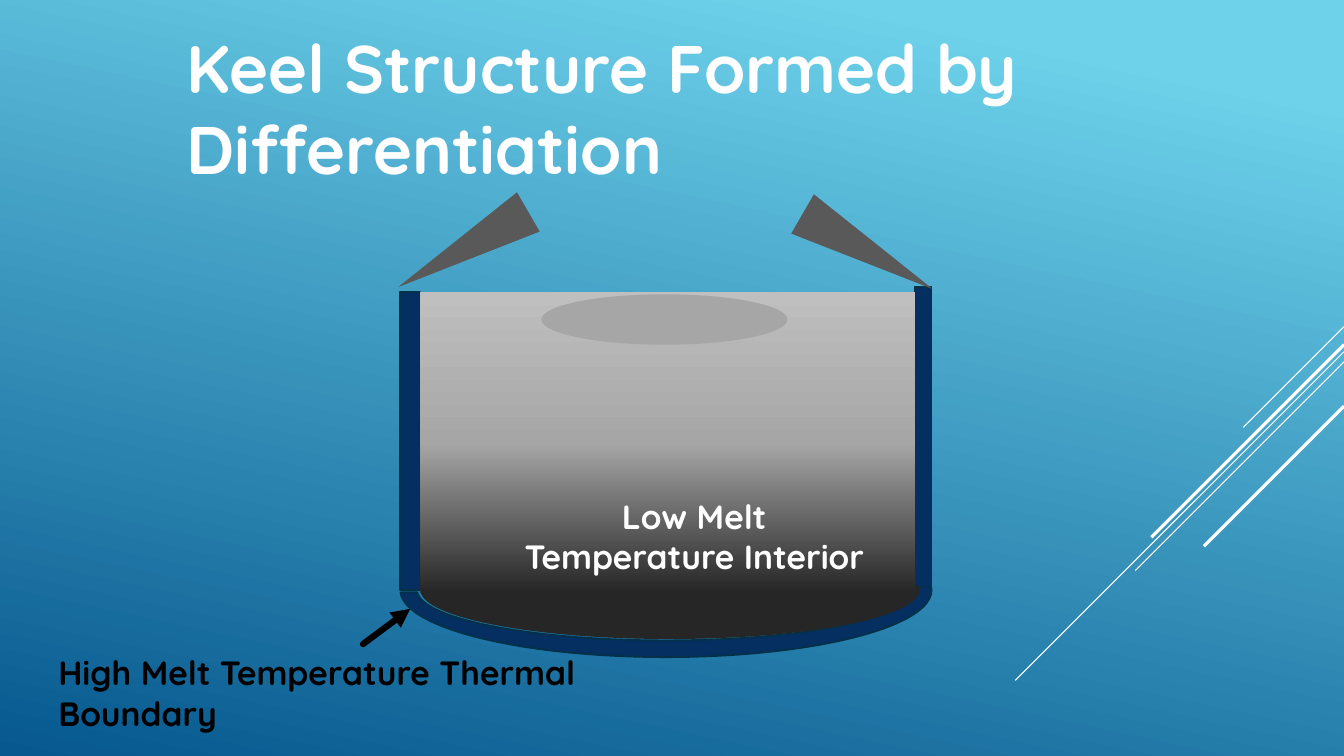
from copy import deepcopy
from dataclasses import dataclass

from pptx import Presentation
from pptx.dml.color import RGBColor as Rgb
from pptx.enum.shapes import MSO_CONNECTOR as Conn, MSO_SHAPE as Geo
from pptx.enum.text import MSO_ANCHOR as Anchor, MSO_AUTO_SIZE as Auto, PP_ALIGN as Align
from pptx.oxml.ns import qn
from pptx.oxml.xmlchemy import OxmlElement as Elem
from pptx.util import Inches, Pt


@dataclass(frozen=True)
class Theme:
    """Colours, font and type sizes."""
    sky: str = "6ED2EB"
    deep: str = "06588E"
    white: str = "FFFFFF"
    black: str = "000000"
    navy: str = "052F61"
    edge: str = "043148"
    coal: str = "262626"
    stone: str = "595959"
    grey: str = "A6A6A6"
    pale: str = "BFBFBF"
    font: str = "Quicksand"
    head: int = 48
    label: int = 24


THEME = Theme()


def blend(fill, root, stops, angle):
    """Fill with a linear gradient of (position, colour) stops."""
    fill.gradient()
    fill.gradient_angle = angle
    group = root.find(".//" + qn("a:gsLst"))
    while len(group) < len(stops):
        group.append(deepcopy(group[-1]))
    for stop, (pos, color) in zip(fill.gradient_stops, stops):
        stop.position = pos
        stop.color.rgb = Rgb.from_string(color)


def write(shape, text, size, color, align=Align.LEFT):
    """Set one bold wrapped paragraph in a shape."""
    frame = shape.text_frame
    frame.word_wrap = True
    frame.auto_size = Auto.SHAPE_TO_FIT_TEXT
    frame.vertical_anchor = Anchor.TOP
    para = frame.paragraphs[0]
    para.alignment = align
    run = para.add_run()
    run.text = text
    run.font.name = THEME.font
    run.font.size = Pt(size)
    run.font.bold = True
    run.font.color.rgb = Rgb.from_string(color)


def label(slide, box, text, color, align=Align.LEFT):
    """Add a text box."""
    area = slide.shapes.add_textbox(*map(Inches, box))
    write(area, text, THEME.label, color, align)


def form(slide, kind, box, color, edge=None, turn=0, adj=()):
    """Add a flat preset shape."""
    shape = slide.shapes.add_shape(kind, *map(Inches, box))
    shape.shadow.inherit = False
    shape.rotation = turn
    for i, value in enumerate(adj):
        shape.adjustments[i] = value
    shape.fill.solid()
    shape.fill.fore_color.rgb = Rgb.from_string(color)
    if edge:
        shape.line.color.rgb = Rgb.from_string(edge)
        shape.line.width = Pt(1.25)
    else:
        shape.line.fill.background()
    return shape


def stroke(slide, start, end, color, width):
    """Add a straight line without shadow."""
    line = slide.shapes.add_connector(Conn.STRAIGHT, *map(Inches, start + end))
    line.line.color.rgb = Rgb.from_string(color)
    line.line.width = Pt(width)
    line._element.spPr.append(Elem("a:effectLst"))
    return line


def rays(slide, right):
    """Draw the diagonal lines that rise to the right edge."""
    for top, run, width in ((3.24, 1, 0.75), (3.49, 3.26, 0.75), (3.59, 2.07, 0.75),
                            (3.42, 1.91, 2.25), (4.03, 1.39, 2.25)):
        stroke(slide, (right, top), (right - run, top + run), THEME.white, width)


def title(slide, box):
    """Place and format the title."""
    head = slide.shapes.title
    head.left, head.top, head.width, head.height = map(Inches, box)
    write(head, "Keel Structure Formed by Differentiation", THEME.head, THEME.white)


def keel(slide, box):
    """Draw the walled melt body with its flaps and inner label."""
    x, y, w, h = box
    navy, edge = THEME.navy, THEME.edge
    form(slide, Geo.BLOCK_ARC, (x, y + 2.34, w, h - 2.34), navy, edge,
         adj=(215.366, 107.71, 0.125))
    form(slide, Geo.RECTANGLE, (x, y + 0.05, 0.2, 2.95), navy, edge)
    form(slide, Geo.RECTANGLE, (x + w - 0.17, y, 0.17, 2.97), navy, edge)
    form(slide, Geo.ARC, (x + 0.2, y + 2.52, 4.95, 0.97), THEME.coal,
         adj=(215.277, 108.057))
    core = form(slide, Geo.RECTANGLE, (x + 0.2, y + 0.05, 4.91, 2.98), THEME.grey)
    blend(core.fill, core._element,
          ((0, THEME.coal), (0.5, THEME.grey), (1, THEME.pale)), 90)
    label(slide, (x + 1.07, y + 2.02, 3.69, 0.91), "Low Melt Temperature Interior",
          THEME.white, Align.CENTER)
    for dx, dy, turn in ((0.4, -1.12, 240), (w - 0.86, -1.1, 120)):
        form(slide, Geo.ISOSCELES_TRIANGLE, (x + dx, y + dy, 0.45, 1.49),
             THEME.stone, turn=turn)
    form(slide, Geo.OVAL, (x + 1.4, y + 0.07, 2.44, 0.5), THEME.grey)


def rim(slide, box):
    """Name the boundary and point an arrow at it."""
    x, y, w, h = box
    label(slide, box, "High Melt Temperature Thermal Boundary", THEME.black)
    arrow = stroke(slide, (x + 3.12, y - 0.03), (x + 3.59, y - 0.38), THEME.black, 4.5)
    pen = arrow.line._get_or_add_ln()
    pen.set("cap", "rnd")
    tip = Elem("a:tailEnd")
    tip.set("type", "triangle")
    pen.append(tip)


def main():
    """Build and save the slide."""
    deck = Presentation()
    deck.slide_width, deck.slide_height = Inches(13.33), Inches(7.5)
    slide = deck.slides.add_slide(deck.slide_layouts[5])
    blend(slide.background.fill, slide.element,
          ((0.1, THEME.sky), (1, THEME.deep)), 258)
    rays(slide, 13.33)
    title(slide, (1.75, 0.21, 9.92, 1.72))
    keel(slide, (3.97, 2.85, 5.27, 3.67))
    rim(slide, (0.48, 6.42, 5.61, 0.91))
    deck.save("out.pptx")


if __name__ == "__main__":
    main()
